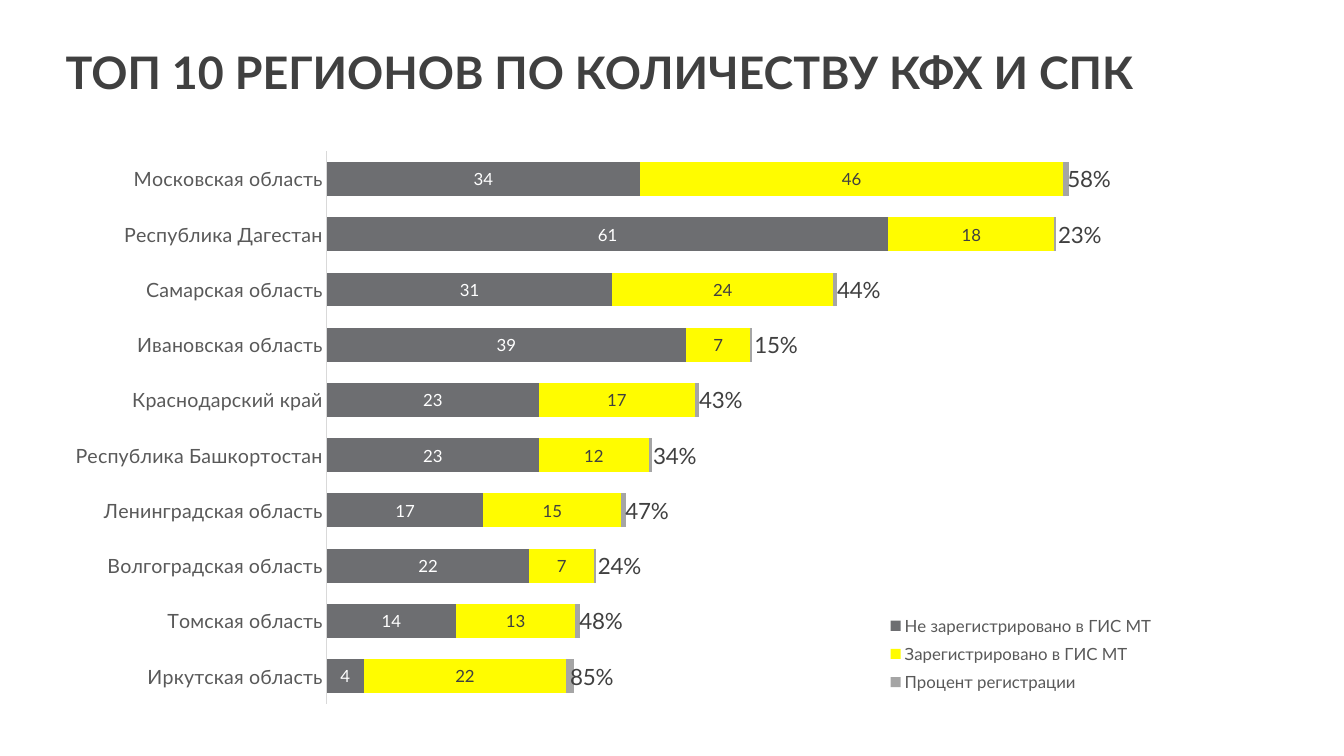
from dataclasses import dataclass
from typing import Any, Optional

import pptx
import pptx.chart.data
import pptx.dml.color
import pptx.enum.chart
import pptx.enum.text
import pptx.oxml
import pptx.oxml.ns
import pptx.util


@dataclass(frozen=True)
class Theme:
    font: str = "Lato"
    dark: str = "404040"
    axis_text: str = "595959"
    axis_line: str = "D9D9D9"
    slate: str = "6D6E71"
    yellow: str = "FFFC00"
    silver: str = "A5A5A5"
    white: str = "FFFFFF"
    title: int = 32
    percent: int = 16
    category: int = 14
    small: int = 12


@dataclass(frozen=True)
class Box:
    """Left, top, width and height, in percent of the container."""
    x: float
    y: float
    w: float
    h: float


@dataclass(frozen=True)
class BarSeries:
    name: str
    fill: str
    label_color: str
    label_size: int
    number_format: str = "General"
    position: Optional[Any] = None


@dataclass(frozen=True)
class Region:
    name: str
    values: tuple[float, float, float]


T = Theme()
SLIDE_W, SLIDE_H = pptx.util.Inches(13.33), pptx.util.Inches(7.5)
TITLE_BOX = Box(4.13, 6.67, 84.92, 7.2)
CHART_BOX = Box(-6.68, 18.27, 93.4, 76.67)
PLOT_BOX = Box(33.2, 2.3, 66, 95.3)
LEGEND_BOX = Box(77.5, 81, 22, 16)
AXIS_MAX = 90

SERIES = [
    BarSeries("Не зарегистрировано в ГИС МТ", T.slate, T.white, T.small),
    BarSeries("Зарегистрировано в ГИС МТ", T.yellow, T.dark, T.small),
    BarSeries("Процент регистрации", T.silver, T.dark, T.percent, "0%",
              pptx.enum.chart.XL_LABEL_POSITION.INSIDE_BASE),
]

REGIONS = [
    Region("Иркутская область", (4, 22, 0.85)),
    Region("Томская область", (14, 13, 0.48)),
    Region("Волгоградская область", (22, 7, 0.24)),
    Region("Ленинградская область", (17, 15, 0.47)),
    Region("Республика Башкортостан", (23, 12, 0.34)),
    Region("Краснодарский край", (23, 17, 0.43)),
    Region("Ивановская область", (39, 7, 0.15)),
    Region("Самарская область", (31, 24, 0.44)),
    Region("Республика Дагестан", (61, 18, 0.23)),
    Region("Московская область", (34, 46, 0.58)),
]


def rgb(color: str) -> pptx.dml.color.RGBColor:
    return pptx.dml.color.RGBColor.from_string(color)


def on_slide(box: Box) -> tuple[int, int, int, int]:
    return (round(SLIDE_W * box.x / 100), round(SLIDE_H * box.y / 100),
            round(SLIDE_W * box.w / 100), round(SLIDE_H * box.h / 100))


def set_font(font: Any, size: int, color: str, bold: bool = False) -> None:
    font.name, font.size, font.bold = T.font, pptx.util.Pt(size), bold
    font.color.rgb = rgb(color)


def write(tf: Any, text: str, *, size: int, color: str, bold: bool = False,
          line_spacing: float = 1.0) -> None:
    p = tf.paragraphs[0]
    p.alignment = pptx.enum.text.PP_ALIGN.LEFT
    p.line_spacing = line_spacing
    r = p.add_run()
    r.text = text
    set_font(r.font, size, color, bold)


def place(element: Any, box: Box, index: int, inner: bool = False) -> None:
    """Give a chart part a manual layout, as the child at the given index."""
    for old in element.findall(pptx.oxml.ns.qn("c:layout")):
        element.remove(old)
    target = '<c:layoutTarget val="inner"/>' if inner else ""
    modes = "".join(f'<c:{k}Mode val="edge"/>' for k in "xy")
    sizes = "".join(f'<c:{k} val="{getattr(box, k) / 100:.3f}"/>' for k in "xywh")
    element.insert(index, pptx.oxml.parse_xml(
        f'<c:layout {pptx.oxml.ns.nsdecls("c")}><c:manualLayout>'
        f'{target}{modes}{sizes}</c:manualLayout></c:layout>'))


def add_title(s: Any) -> None:
    sp = s.shapes.title
    sp.left, sp.top, sp.width, sp.height = on_slide(TITLE_BOX)
    tf = sp.text_frame
    tf.word_wrap = True
    tf.auto_size = pptx.enum.text.MSO_AUTO_SIZE.SHAPE_TO_FIT_TEXT
    tf.vertical_anchor = pptx.enum.text.MSO_ANCHOR.TOP
    write(tf, "ТОП 10 РЕГИОНОВ ПО КОЛИЧЕСТВУ КФХ И СПК",
          size=T.title, color=T.dark, bold=True, line_spacing=0.8)


def format_axes(chart: Any) -> None:
    none = pptx.enum.chart.XL_TICK_MARK.NONE
    cat, val = chart.category_axis, chart.value_axis
    cat.major_tick_mark = cat.minor_tick_mark = none
    cat.has_major_gridlines = False
    set_font(cat.tick_labels.font, T.category, T.axis_text)
    cat.format.line.color.rgb = rgb(T.axis_line)
    cat.format.line.width = pptx.util.Pt(0.75)
    val.minimum_scale, val.maximum_scale = 0, AXIS_MAX
    val.has_major_gridlines = False
    val.visible = False


def format_series(series: Any, look: BarSeries) -> None:
    series.format.fill.solid()
    series.format.fill.fore_color.rgb = rgb(look.fill)
    series.invert_if_negative = False
    labels = series.data_labels
    labels.show_value = True
    labels.number_format = look.number_format
    labels.number_format_is_linked = False
    if look.position is not None:
        labels.position = look.position
    set_font(labels.font, look.label_size, look.label_color)


def add_region_chart(s: Any) -> None:
    data = pptx.chart.data.CategoryChartData()
    data.categories = [region.name for region in REGIONS]
    for i, look in enumerate(SERIES):
        data.add_series(look.name, [region.values[i] for region in REGIONS])
    chart = s.shapes.add_chart(pptx.enum.chart.XL_CHART_TYPE.BAR_STACKED,
                               *on_slide(CHART_BOX), data).chart
    set_font(chart.font, T.small, T.axis_text)
    chart.has_title = False
    format_axes(chart)

    plot = chart.plots[0]
    plot.gap_width, plot.overlap = 63, 100
    plot.vary_by_categories = False
    for series, look in zip(plot.series, SERIES):
        format_series(series, look)
    place(chart.element.chart.plotArea, PLOT_BOX, 0, inner=True)

    chart.has_legend = True
    legend = chart.legend
    legend.position = pptx.enum.chart.XL_LEGEND_POSITION.RIGHT
    legend.include_in_layout = False
    set_font(legend.font, T.small, T.axis_text)
    legend_xml = chart.element.chart.find(pptx.oxml.ns.qn("c:legend"))
    has_position = legend_xml.find(pptx.oxml.ns.qn("c:legendPos")) is not None
    place(legend_xml, LEGEND_BOX, int(has_position))


def main() -> None:
    prs = pptx.Presentation()
    prs.slide_width, prs.slide_height = SLIDE_W, SLIDE_H
    s = prs.slides.add_slide(prs.slide_layouts[5])
    add_region_chart(s)
    add_title(s)
    prs.save("out.pptx")


if __name__ == "__main__":
    main()
